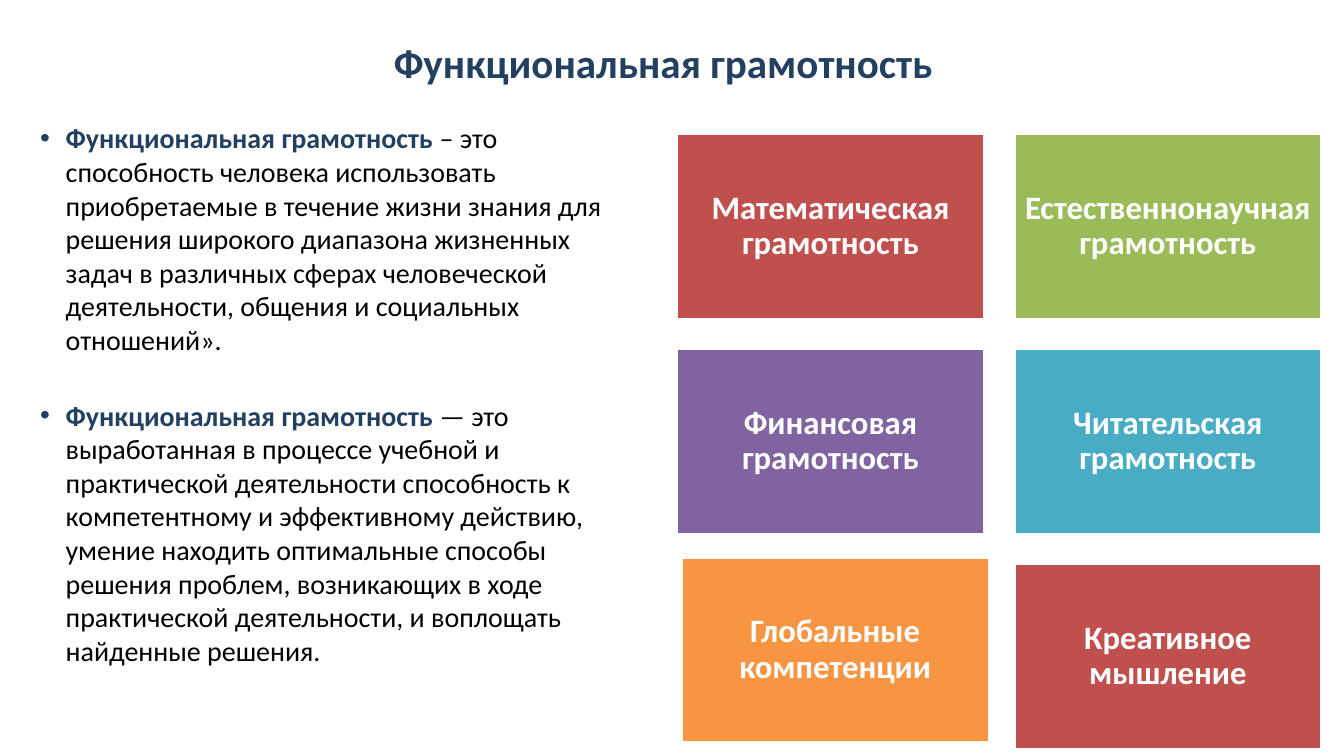
"""Build a slide that defines functional literacy and shows its six components."""

import dataclasses

import lxml.etree
import pptx
import pptx.dml.color
import pptx.enum.shapes
import pptx.enum.text
import pptx.oxml.ns
import pptx.presentation
import pptx.shapes.autoshape
import pptx.slide
import pptx.text.text
import pptx.util

Inches = pptx.util.Inches
Pt = pptx.util.Pt

FONT = "Calibri"
NAVY = "244061"
BLACK = "000000"
WHITE = "FFFFFF"
TERM = "Функциональная грамотность"

COLUMNS = 2
GRID_LEFT, GRID_TOP = 10.08, 2.0
TILE_WIDTH, TILE_HEIGHT = 4.56, 2.74
GAP = 0.46
INDENT = 0.38


@dataclasses.dataclass(frozen=True)
class Tile:
    label: str
    fill: str
    shift_x: float = 0
    shift_y: float = 0


@dataclasses.dataclass(frozen=True)
class Definition:
    text: str
    space_before: float


TILES = [
    Tile("Математическая грамотность", "BF504D"),
    Tile("Естественнонаучная грамотность", "9BBB59"),
    Tile("Финансовая грамотность", "8064A2"),
    Tile("Читательская грамотность", "49ACC5"),
    Tile("Глобальные компетенции", "F79543", 0.07, -0.1),
    Tile("Креативное мышление", "BF504D"),
]

DEFINITIONS = [
    Definition(
        " – это способность человека использовать приобретаемые в течение жизни "
        "знания для решения широкого диапазона жизненных задач в различных сферах "
        "человеческой деятельности, общения и социальных отношений».",
        0,
    ),
    Definition(
        " — это выработанная в процессе учебной и практической деятельности "
        "способность к компетентному и эффективному действию, умение находить "
        "оптимальные способы решения проблем, возникающих в ходе практической "
        "деятельности, и воплощать найденные решения.",
        45,
    ),
]


def color(value: str) -> pptx.dml.color.RGBColor:
    return pptx.dml.color.RGBColor.from_string(value)


def format_run(run: pptx.text.text._Run, size: float, value: str, bold: bool) -> None:
    run.font.name = FONT
    run.font.size = Pt(size)
    run.font.bold = bold
    run.font.color.rgb = color(value)


def add_text_box(
    slide: pptx.slide.Slide, left: float, top: float, width: float, height: float
) -> pptx.text.text.TextFrame:
    box = slide.shapes.add_textbox(Inches(left), Inches(top), Inches(width), Inches(height))
    box.text_frame.word_wrap = True
    return box.text_frame


def add_title(slide: pptx.slide.Slide) -> None:
    text_frame = add_text_box(slide, 0.5, 0.3, 18.75, 1.25)
    text_frame.vertical_anchor = pptx.enum.text.MSO_ANCHOR.MIDDLE
    text_frame.text = TERM
    paragraph = text_frame.paragraphs[0]
    paragraph.alignment = pptx.enum.text.PP_ALIGN.CENTER
    format_run(paragraph.runs[0], 44, NAVY, True)


def add_bullet(paragraph: pptx.text.text._Paragraph) -> None:
    qualified = pptx.oxml.ns.qn
    properties = paragraph._p.get_or_add_pPr()
    properties.set("marL", str(Inches(INDENT)))
    properties.set("indent", str(Inches(-INDENT)))
    bullet_color = lxml.etree.SubElement(properties, qualified("a:buClr"))
    lxml.etree.SubElement(bullet_color, qualified("a:srgbClr"), val=NAVY)
    lxml.etree.SubElement(properties, qualified("a:buFont"), typeface="Arial")
    lxml.etree.SubElement(properties, qualified("a:buChar"), char="•")


def add_definitions(slide: pptx.slide.Slide, definitions: list[Definition]) -> None:
    text_frame = add_text_box(slide, 0.5, 1.75, 9, 9.12)
    for index, definition in enumerate(definitions):
        paragraph = text_frame.add_paragraph() if index else text_frame.paragraphs[0]
        add_bullet(paragraph)
        paragraph.space_before = Pt(definition.space_before)
        for text, value, bold in ((TERM, NAVY, True), (definition.text, BLACK, False)):
            run = paragraph.add_run()
            run.text = text
            format_run(run, 30, value, bold)


def add_tile(slide: pptx.slide.Slide, tile: Tile, row: int, column: int) -> None:
    shape = slide.shapes.add_shape(
        pptx.enum.shapes.MSO_SHAPE.RECTANGLE,
        Inches(GRID_LEFT + column * (TILE_WIDTH + GAP) + tile.shift_x),
        Inches(GRID_TOP + row * (TILE_HEIGHT + GAP) + tile.shift_y),
        Inches(TILE_WIDTH),
        Inches(TILE_HEIGHT),
    )
    shape.shadow.inherit = False
    shape.fill.solid()
    shape.fill.fore_color.rgb = color(tile.fill)
    shape.line.color.rgb = color(WHITE)
    shape.line.width = Pt(2)
    text_frame = shape.text_frame
    text_frame.word_wrap = True
    text_frame.vertical_anchor = pptx.enum.text.MSO_ANCHOR.MIDDLE
    text_frame.margin_left = text_frame.margin_right = Inches(0.15)
    text_frame.margin_top = text_frame.margin_bottom = Inches(0.15)
    text_frame.text = tile.label
    paragraph = text_frame.paragraphs[0]
    paragraph.alignment = pptx.enum.text.PP_ALIGN.CENTER
    paragraph.line_spacing = 0.9
    format_run(paragraph.runs[0], 35, WHITE, True)


def main() -> None:
    presentation = pptx.Presentation()
    presentation.slide_width = Inches(20)
    presentation.slide_height = Inches(11.25)
    slide = presentation.slides.add_slide(presentation.slide_layouts[6])
    add_title(slide)
    add_definitions(slide, DEFINITIONS)
    for index, tile in enumerate(TILES):
        add_tile(slide, tile, *divmod(index, COLUMNS))
    presentation.save("out.pptx")


if __name__ == "__main__":
    main()
